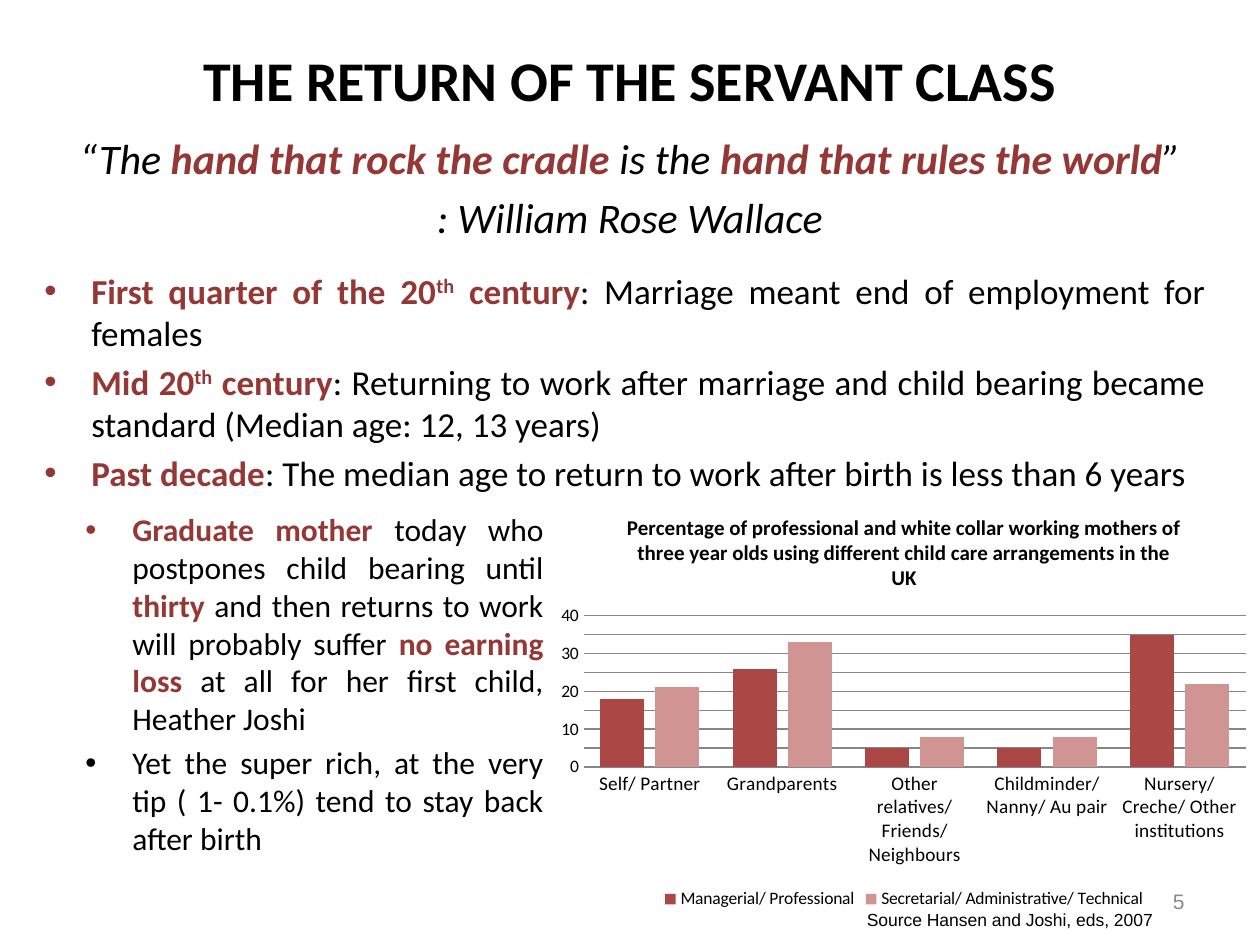
from copy import deepcopy
from dataclasses import dataclass

from lxml import etree
from pptx import Presentation
from pptx.chart.data import CategoryChartData
from pptx.dml.color import RGBColor
from pptx.enum.chart import XL_CHART_TYPE, XL_LEGEND_POSITION, XL_TICK_MARK
from pptx.enum.text import MSO_ANCHOR, PP_ALIGN
from pptx.oxml.ns import qn
from pptx.util import Emu, Pt

PX = 914400 / 126
TOP, MIDDLE = MSO_ANCHOR.TOP, MSO_ANCHOR.MIDDLE
CENTER, RIGHT, JUSTIFY = PP_ALIGN.CENTER, PP_ALIGN.RIGHT, PP_ALIGN.JUSTIFY
CLUSTERED, BOTTOM = XL_CHART_TYPE.COLUMN_CLUSTERED, XL_LEGEND_POSITION.BOTTOM
NO_TICK = XL_TICK_MARK.NONE
COLORS = {
    "text": "000000",
    "accent": "953735",
    "muted": "898989",
    "grid": "868686",
    "managerial": "AB4744",
    "secretarial": "D09493",
}


@dataclass(frozen=True)
class Run:
    text: str
    strong: bool = False
    raised: bool = False


@dataclass(frozen=True)
class TextBlock:
    box: tuple[int, int, int, int]
    paragraphs: list[list[Run]]
    size: int
    align: PP_ALIGN
    anchor: MSO_ANCHOR = TOP
    font: str = "Calibri"
    color: str = "text"
    bold: bool = False
    italic: bool = False
    bullet_left: int = 0
    level: int = 0


def px(length: int) -> Emu:
    return Emu(round(length * PX))


def rgb(name: str) -> RGBColor:
    return RGBColor.from_string(COLORS[name])


def add_bullet(paragraph, left: int) -> None:
    """Hang a round bullet before text that starts at left px."""
    properties = paragraph._p.get_or_add_pPr()
    properties.set("marL", str(px(left)))
    properties.set("indent", str(px(-47)))
    etree.SubElement(properties, qn("a:buFont")).set("typeface", "Arial")
    etree.SubElement(properties, qn("a:buChar")).set("char", "•")


def add_text(slide, block: TextBlock) -> None:
    shape = slide.shapes.add_textbox(*map(px, block.box))
    text_frame = shape.text_frame
    text_frame.word_wrap = True
    text_frame.vertical_anchor = block.anchor
    for index, runs in enumerate(block.paragraphs):
        paragraph = text_frame.add_paragraph() if index else text_frame.paragraphs[0]
        paragraph.alignment = block.align
        paragraph.level = block.level
        if index:
            paragraph.space_before = Pt(block.size * 0.2)
        if block.bullet_left:
            add_bullet(paragraph, block.bullet_left)
        for part in runs:
            run = paragraph.add_run()
            run.text = part.text
            font = run.font
            font.name, font.size = block.font, Pt(block.size)
            font.bold = block.bold or part.strong
            font.italic = block.italic
            font.color.rgb = rgb("accent" if part.strong else block.color)
            if part.raised:
                run._r.get_or_add_rPr().set("baseline", "30000")


def set_plot_layout(chart, **fractions: float) -> None:
    """Place the inner plot area by x, y, w and h as fractions of the chart."""
    plot_area = chart._chartSpace.chart.plotArea
    for old in plot_area.findall(qn("c:layout")):
        plot_area.remove(old)
    layout = etree.Element(qn("c:layout"))
    plot_area.insert(0, layout)
    manual = etree.SubElement(layout, qn("c:manualLayout"))
    settings = {"layoutTarget": "inner", "xMode": "edge", "yMode": "edge", **fractions}
    for name, value in settings.items():
        etree.SubElement(manual, qn(f"c:{name}")).set("val", str(value))


def add_gridlines(axis) -> None:
    """Give major and minor gridlines the same thin line."""
    axis.has_major_gridlines = axis.has_minor_gridlines = True
    line = axis.major_gridlines.format.line
    line.color.rgb, line.width = rgb("grid"), Pt(0.75)
    major, minor = (axis._element.find(qn(f"c:{name}Gridlines")) for name in ("major", "minor"))
    minor.append(deepcopy(major.find(qn("c:spPr"))))


def add_childcare_chart(slide) -> None:
    data = CategoryChartData()
    data.categories = [
        "Self/ Partner",
        "Grandparents",
        "Other relatives/ Friends/ Neighbours",
        "Childminder/ Nanny/ Au pair",
        "Nursery/ Creche/ Other institutions",
    ]
    data.add_series("Managerial/ Professional", [18, 26, 5, 5, 35])
    data.add_series("Secretarial/ Administrative/ Technical", [21, 33, 8, 8, 22])
    box = map(px, (548, 494, 712, 420))
    chart = slide.shapes.add_chart(CLUSTERED, *box, data).chart
    chart.font.name, chart.font.size = "Calibri", Pt(10)
    chart.font.color.rgb = rgb("text")

    title = chart.chart_title.text_frame
    title.text = (
        "Percentage of professional and white collar working mothers of "
        "three year olds using different child care arrangements in the UK"
    )
    font = title.paragraphs[0].runs[0].font
    font.name, font.size, font.bold = "Calibri", Pt(12), True
    font.color.rgb = rgb("text")

    plot = chart.plots[0]
    plot.gap_width, plot.overlap = 75, -25
    plot.vary_by_categories = False
    for series, color in zip(plot.series, ("managerial", "secretarial")):
        series.format.fill.solid()
        series.format.fill.fore_color.rgb = rgb(color)

    value_axis, category_axis = chart.value_axis, chart.category_axis
    for axis in (value_axis, category_axis):
        axis.major_tick_mark = axis.minor_tick_mark = NO_TICK
    category_axis.tick_labels.font.size = Pt(11)
    category_axis.format.line.color.rgb = rgb("grid")
    value_axis.minimum_scale, value_axis.maximum_scale = 0, 40
    value_axis.major_unit, value_axis.minor_unit = 10, 5
    value_axis.format.line.fill.background()
    add_gridlines(value_axis)

    chart.has_legend = True
    chart.legend.position = BOTTOM
    chart.legend.include_in_layout = False
    set_plot_layout(chart, x=0.05, y=0.29, w=0.93, h=0.36)


def century(period: str, statement: str) -> list[Run]:
    return [Run(f"{period} 20", True), Run("th", True, True),
            Run(" century", True), Run(f": {statement}")]


QUOTE = [
    [Run("“The "), Run("hand that rock the cradle ", True), Run("is the "),
     Run("hand that rules the world", True), Run("”")],
    [Run(": William Rose Wallace")],
]
TIMELINE = [
    century("First quarter of the", "Marriage meant end of employment for females"),
    century("Mid", "Returning to work after marriage and child bearing became "
                   "standard (Median age: 12, 13 years)"),
    [Run("Past decade", True),
     Run(": The median age to return to work after birth is less than 6 years")],
]
MOTHERS = [
    [Run("Graduate mother ", True), Run("today who postpones child bearing until "),
     Run("thirty", True), Run(" and then returns to work will probably suffer "),
     Run("no earning loss ", True), Run("at all for her first child, Heather Joshi")],
    [Run("Yet the super rich, at the very tip ( 1- 0.1%) tend to stay back after birth")],
]
BLOCKS = [
    TextBlock((903, 876, 294, 50), [[Run("5")]], 12, RIGHT, MIDDLE, "Arial", "muted"),
    TextBlock((0, 0, 1260, 158), [[Run("THE RETURN OF THE SERVANT CLASS")]], 32,
              CENTER, MIDDLE, bold=True),
    TextBlock((0, 126, 1260, 147), QUOTE, 24, CENTER, italic=True),
    TextBlock((32, 263, 1186, 410), TIMELINE, 20, JUSTIFY, bullet_left=47),
    TextBlock((10, 504, 546, 410), MOTHERS, 18, JUSTIFY, bullet_left=110, level=1),
    TextBlock((651, 903, 514, 34), [[Run("Source Hansen and Joshi, eds, 2007")]], 10,
              RIGHT, font="Arial"),
]


def main() -> None:
    presentation = Presentation()
    presentation.slide_width, presentation.slide_height = px(1260), px(945)
    slide = presentation.slides.add_slide(presentation.slide_layouts[6])
    add_childcare_chart(slide)
    for block in BLOCKS:
        add_text(slide, block)
    presentation.save("out.pptx")


if __name__ == "__main__":
    main()
